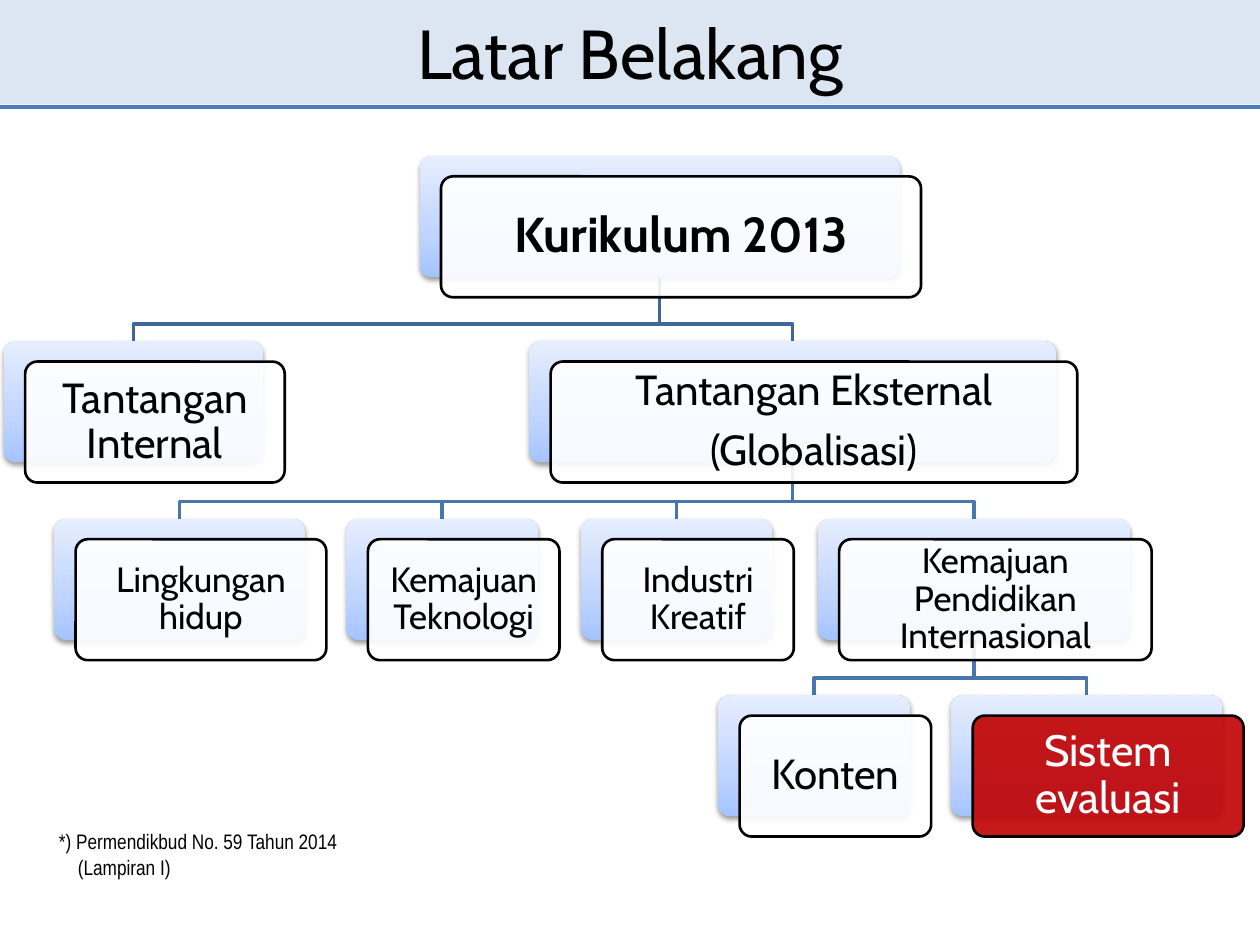
"""Builds the "Latar Belakang" slide: a four-level tree of layered cards."""
from dataclasses import dataclass

from lxml import etree
from pptx import Presentation
from pptx import util as u
from pptx.dml.color import RGBColor
from pptx.enum import shapes, text
from pptx.oxml.ns import qn

BLACK = RGBColor(0x00, 0x00, 0x00)
WHITE = RGBColor(0xFF, 0xFF, 0xFF)
RED = RGBColor(0xC0, 0x00, 0x00)
BANNER = RGBColor(0xDC, 0xE6, 0xF2)
RULE = RGBColor(0x4B, 0x7E, 0xBC)
UPPER_BRANCH = RGBColor(0x3F, 0x67, 0x97)
LOWER_BRANCH = RGBColor(0x48, 0x75, 0xAC)
GRADIENT = (
    (0, RGBColor(0xA4, 0xC4, 0xFF)),
    (35, RGBColor(0xBF, 0xD4, 0xFF)),
    (100, RGBColor(0xE6, 0xEE, 0xFF)),
)

SLIDE_WIDTH, SLIDE_HEIGHT = 10, 7.5
BANNER_HEIGHT, RULE_Y = 0.83, 0.85
ROW_TOPS = (1.24, 2.71, 4.12, 5.52)
CARD_HEIGHT, SHIFT_RIGHT, SHIFT_DOWN, BEND = 0.96, 0.17, 0.16, 0.14


@dataclass
class Topic:
    """One topic of the tree, with its row, place and format."""

    label: str
    row: int
    left: float
    width: float
    size: float
    bold: bool = False
    fill: RGBColor = WHITE
    color: RGBColor = BLACK
    children: tuple = ()

    @property
    def center(self):
        return self.left + self.width / 2

    @property
    def top(self):
        return ROW_TOPS[self.row]


TREE = Topic("Kurikulum 2013", 0, 3.33, 3.81, 28, bold=True, children=(
    Topic("Tantangan Internal", 1, 0.03, 2.06, 24),
    Topic("Tantangan Eksternal\n(Globalisasi)", 1, 4.2, 4.18, 24, children=(
        Topic("Lingkungan hidup", 2, 0.43, 1.99, 20),
        Topic("Kemajuan Teknologi", 2, 2.75, 1.52, 20),
        Topic("Industri Kreatif", 2, 4.61, 1.52, 20),
        Topic("Kemajuan Pendidikan Internasional", 2, 6.49, 2.48, 20, children=(
            Topic("Konten", 3, 5.7, 1.52, 24),
            Topic("Sistem evaluasi", 3, 7.55, 2.15, 25, fill=RED, color=WHITE),
        )),
    )),
))


def write_text(frame, content, size, font="Cabin", color=BLACK, bold=False,
               align=text.PP_ALIGN.CENTER, anchor=text.MSO_ANCHOR.MIDDLE,
               spacing=None, after=0, inset=None, last_indent=0):
    """Write the lines of content into a text frame."""
    frame.word_wrap = True
    frame.vertical_anchor = anchor
    if inset is not None:
        frame.margin_left = frame.margin_right = u.Inches(inset)
        frame.margin_top = frame.margin_bottom = u.Inches(inset)
    frame.text = content
    for paragraph in frame.paragraphs:
        paragraph.alignment = align
        paragraph.line_spacing = spacing
        paragraph.space_after = u.Pt(after)
        paragraph.font.size = u.Pt(size)
        paragraph.font.name = font
        paragraph.font.bold = bold
        paragraph.font.color.rgb = color
    if last_indent:
        properties = frame.paragraphs[-1]._p.get_or_add_pPr()
        properties.set("marL", str(u.Inches(last_indent)))


def add_panel(slide, kind, left, top, width, height):
    """Add a preset shape without shadow, measured in inches."""
    panel = slide.shapes.add_shape(
        kind, *(u.Inches(length) for length in (left, top, width, height)))
    panel.shadow.inherit = False
    return panel


def add_rounded(slide, topic, right=0, down=0):
    """Add one layer of a topic's card, shifted right and down."""
    layer = add_panel(slide, shapes.MSO_SHAPE.ROUNDED_RECTANGLE,
                      topic.left + right, topic.top + down, topic.width, CARD_HEIGHT)
    layer.adjustments[0] = 0.1
    return layer


def add_color(parent, color, alpha=None):
    """Append an RGB colour, with an optional opacity in percent."""
    node = etree.SubElement(parent, qn("a:srgbClr"), val=str(color))
    if alpha is not None:
        etree.SubElement(node, qn("a:alpha"), val=str(alpha * 1000))


def add_card(slide, topic):
    """Add the shaded back layer and the labelled front layer of a topic."""
    back = add_rounded(slide, topic)
    back.line.fill.background()
    back.fill.gradient()
    back.fill.gradient_angle = 90
    properties = back._element.spPr
    stops = properties.find(".//" + qn("a:gsLst"))
    for stop in list(stops):
        stops.remove(stop)
    for percent, color in GRADIENT:
        add_color(etree.SubElement(stops, qn("a:gs"), pos=str(percent * 1000)), color)
    shadow = etree.SubElement(
        properties.find(qn("a:effectLst")), qn("a:outerShdw"),
        blurRad=str(u.Pt(3.1)), dist=str(u.Pt(1.6)), dir="5400000", rotWithShape="0")
    add_color(shadow, BLACK, alpha=38)

    front = add_rounded(slide, topic, SHIFT_RIGHT, SHIFT_DOWN)
    front.fill.solid()
    front.fill.fore_color.rgb = topic.fill
    solid_color = front._element.spPr.find(qn("a:solidFill"))[0]
    etree.SubElement(solid_color, qn("a:alpha"), val="90000")
    front.line.color.rgb = BLACK
    front.line.width = u.Pt(1.5)
    write_text(front.text_frame, topic.label, topic.size, color=topic.color,
               bold=topic.bold, spacing=0.9, after=0.35 * topic.size,
               inset=0.03 + topic.size * 0.3 / 72)


def add_branch(slide, parent, child):
    """Draw the bent line from a parent card down to a child card."""
    start_x, end_x = u.Inches(parent.center), u.Inches(child.center)
    start_y, end_y = u.Inches(parent.top + CARD_HEIGHT), u.Inches(child.top)
    bend = end_y - u.Inches(BEND)
    builder = slide.shapes.build_freeform(start_x, start_y)
    builder.add_line_segments(
        [(start_x, bend), (end_x, bend), (end_x, end_y)], close=False)
    branch = builder.convert_to_shape()
    branch.shadow.inherit = False
    branch.fill.background()
    branch.line.color.rgb = LOWER_BRANCH if parent.row else UPPER_BRANCH
    branch.line.width = u.Pt(2)


def walk(topic):
    """Yield a topic and everything below it."""
    yield topic
    for child in topic.children:
        yield from walk(child)


def add_banner(slide):
    """Add the title band and the rule under it."""
    banner = add_panel(slide, shapes.MSO_SHAPE.RECTANGLE, 0, 0, SLIDE_WIDTH, BANNER_HEIGHT)
    banner.fill.solid()
    banner.fill.fore_color.rgb = BANNER
    banner.line.fill.background()
    write_text(banner.text_frame, "Latar Belakang", 39.6)
    rule = slide.shapes.add_connector(
        shapes.MSO_CONNECTOR.STRAIGHT, 0, u.Inches(RULE_Y),
        u.Inches(SLIDE_WIDTH), u.Inches(RULE_Y))
    rule.line.color.rgb = RULE
    rule.line.width = u.Pt(2)
    etree.SubElement(rule._element.spPr, qn("a:effectLst"))


def add_footnote(slide):
    """Add the reference at the lower left."""
    footnote = slide.shapes.add_textbox(
        *(u.Inches(length) for length in (0.37, 6.53, 4.06, 0.5)))
    write_text(footnote.text_frame, "*) Permendikbud No. 59 Tahun 2014\n(Lampiran I)", 12,
               font="Arial Narrow", align=text.PP_ALIGN.LEFT,
               anchor=text.MSO_ANCHOR.TOP, last_indent=0.15)


def main():
    """Build and save the slide."""
    deck = Presentation()
    deck.slide_width, deck.slide_height = u.Inches(SLIDE_WIDTH), u.Inches(SLIDE_HEIGHT)
    slide = deck.slides.add_slide(deck.slide_layouts[6])
    add_banner(slide)
    topics = list(walk(TREE))
    for parent in topics:
        for child in parent.children:
            add_branch(slide, parent, child)
    for topic in topics:
        add_card(slide, topic)
    add_footnote(slide)
    deck.save("out.pptx")


if __name__ == "__main__":
    main()
